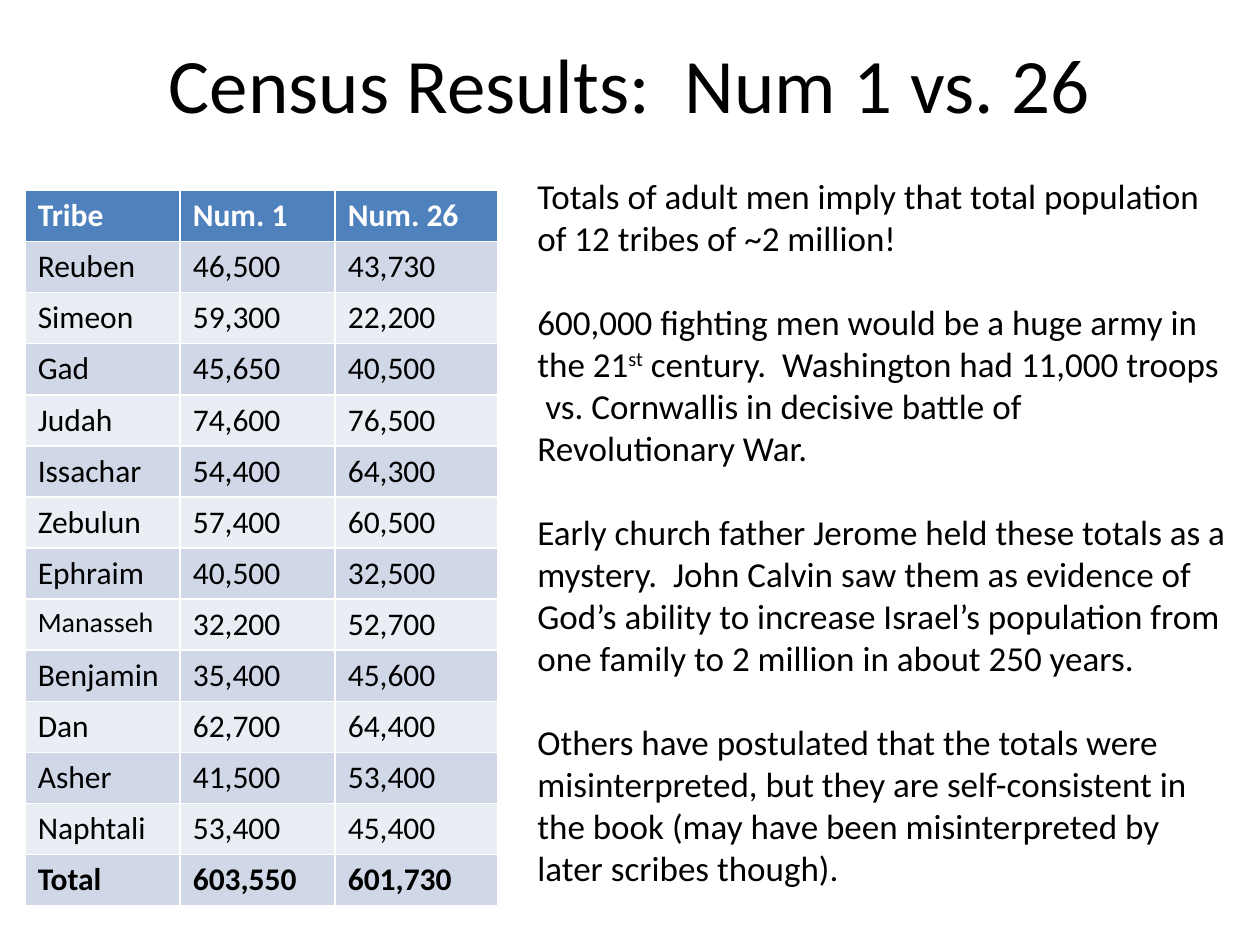
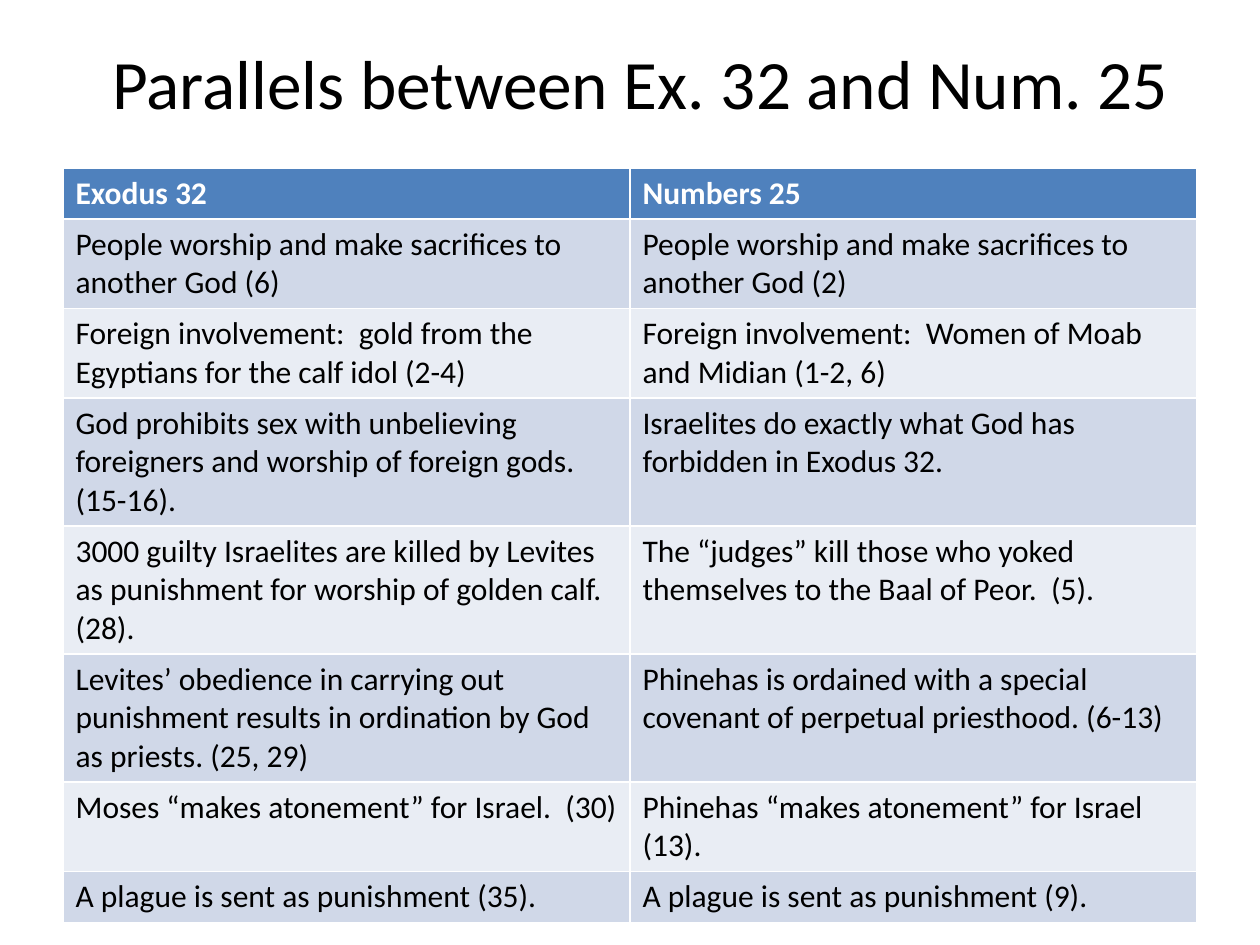
from pptx import Presentation
from pptx.dml.color import RGBColor
from pptx.enum.text import MSO_ANCHOR, MSO_AUTO_SIZE, PP_ALIGN
from pptx.util import Pt

# Content
CENSUS = [
    ("Tribe", "Num. 1", "Num. 26"),
    ("Reuben", "46,500", "43,730"),
    ("Simeon", "59,300", "22,200"),
    ("Gad", "45,650", "40,500"),
    ("Judah", "74,600", "76,500"),
    ("Issachar", "54,400", "64,300"),
    ("Zebulun", "57,400", "60,500"),
    ("Ephraim", "40,500", "32,500"),
    ("Manasseh", "32,200", "52,700"),
    ("Benjamin", "35,400", "45,600"),
    ("Dan", "62,700", "64,400"),
    ("Asher", "41,500", "53,400"),
    ("Naphtali", "53,400", "45,400"),
    ("Total", "603,550", "601,730"),
]

# Each note is a list of runs; a run in RAISED is set as superscript
RAISED = {"st"}
NOTES = [
    ["Totals of adult men imply that total population of 12 tribes of ~2 million!"],
    ["600,000 fighting men would be a huge army in the 21", "st",
     " century.  Washington had 11,000 troops  vs. Cornwallis in decisive "
     "battle of Revolutionary War."],
    ["Early church father Jerome held these totals as a mystery.  John Calvin saw "
     "them as evidence of God’s ability to increase Israel’s population from one "
     "family to 2 million in about 250 years."],
    ["Others have postulated that the totals were misinterpreted, but they are "
     "self-consistent in the book (may have been misinterpreted by later scribes "
     "though)."],
]

PARALLELS = [
    ("Exodus 32", "Numbers 25"),
    ("People worship and make sacrifices to another God (6)",
     "People worship and make sacrifices to another God (2)"),
    ("Foreign involvement:  gold from the Egyptians for the calf idol (2-4)",
     "Foreign involvement:  Women of Moab and Midian (1-2, 6)"),
    ("God prohibits sex with unbelieving foreigners and worship of foreign gods.  "
     "(15-16).",
     "Israelites do exactly what God has forbidden in Exodus 32."),
    ("3000 guilty Israelites are killed by Levites as punishment for worship of "
     "golden calf. (28).",
     "The “judges” kill those who yoked themselves to the Baal of Peor.  (5)."),
    ("Levites’ obedience in carrying out punishment results in ordination by God "
     "as priests. (25, 29)",
     "Phinehas is ordained with a special covenant of perpetual priesthood. (6-13)"),
    ("Moses “makes atonement” for Israel.  (30)",
     "Phinehas “makes atonement” for Israel (13)."),
    ("A plague is sent as punishment (35).",
     "A plague is sent as punishment (9)."),
]

# Shared style
FONT = "Calibri"
BLACK, WHITE = "000000", "FFFFFF"
HEAD, BANDS = "4F81BD", ("E9EDF4", "D0D8E8")
ROW = 29.2


def color(code):
    return RGBColor.from_string(code)


def style(para, size, code=BLACK, bold=False):
    font = para.font
    font.name, font.size, font.bold = FONT, Pt(size), bold
    font.color.rgb = color(code)


def add_slide(deck, text, left, size):
    slide = deck.slides.add_slide(deck.slide_layouts[5])
    title = slide.shapes.title
    title.left, title.top, title.width, title.height = map(Pt, (left, 2, 648, 90))
    frame = title.text_frame
    frame.text = text
    frame.auto_size = MSO_AUTO_SIZE.NONE
    frame.vertical_anchor = MSO_ANCHOR.MIDDLE
    para = frame.paragraphs[0]
    para.alignment = PP_ALIGN.CENTER
    style(para, size)
    return slide


def add_grid(slide, rows, left, top, widths):
    """Table with a dark heading row and two alternating row fills."""
    grid = slide.shapes.add_table(
        len(rows), len(widths), Pt(left), Pt(top),
        Pt(sum(widths)), Pt(ROW * len(rows))).table
    for col, width in zip(grid.columns, widths):
        col.width = Pt(width)
    for r, texts in enumerate(rows):
        grid.rows[r].height = Pt(ROW)
        for c, text in enumerate(texts):
            cell = grid.cell(r, c)
            cell.text = text
            cell.fill.solid()
            cell.fill.fore_color.rgb = color(BANDS[r % 2] if r else HEAD)
            style(cell.text_frame.paragraphs[0], 16 if text == "Manasseh" else 18,
                  BLACK if r else WHITE, r == 0 or texts[0] == "Total")


def add_notes(slide, notes, left, top, width, height):
    frame = slide.shapes.add_textbox(
        Pt(left), Pt(top), Pt(width), Pt(height)).text_frame
    frame.word_wrap = True
    for i, runs in enumerate(notes):
        para = frame.paragraphs[0] if i == 0 else frame.add_paragraph()
        para.space_before = Pt(24 if i else 0)
        style(para, 20)
        for text in runs:
            run = para.add_run()
            run.text = text
            if text in RAISED:
                run.font._element.set("baseline", "30000")


def main():
    deck = Presentation()
    deck.slide_width, deck.slide_height = Pt(720), Pt(540)

    # Census totals
    slide = add_slide(deck, "Census Results:  Num 1 vs. 26", 36, 44)
    add_grid(slide, CENSUS, 14.4, 108.8, (88.6, 88.6, 92.9))
    add_notes(slide, NOTES, 300, 96, 408, 419)

    # Parallel passages
    slide = add_slide(deck, "Parallels between Ex. 32 and Num. 25", 42, 39.6)
    add_grid(slide, PARALLELS, 36, 96, (324, 324))

    deck.save("out.pptx")


if __name__ == "__main__":
    main()
